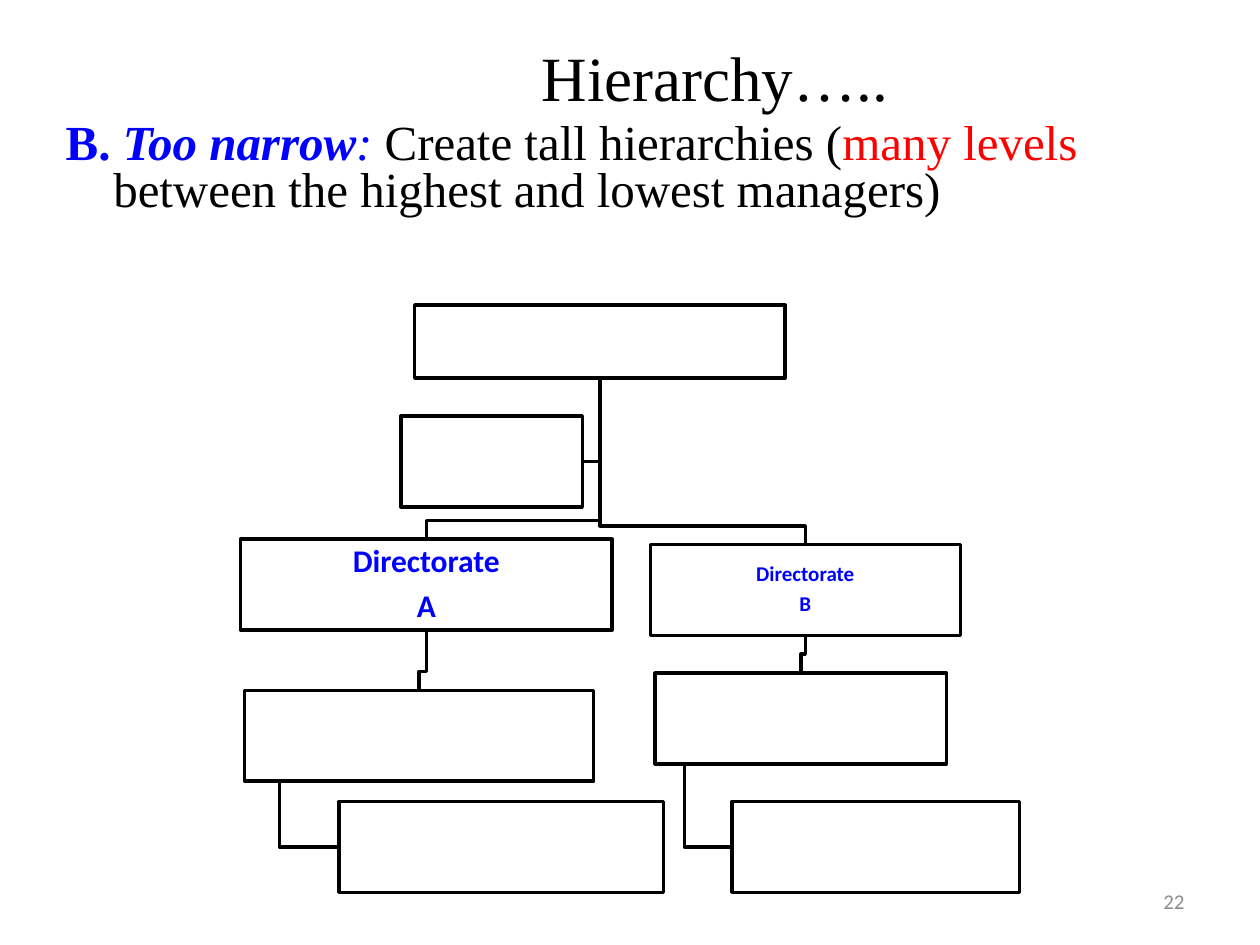
from lxml.etree import SubElement
from pptx import Presentation
from pptx.dml.color import RGBColor
from pptx.enum.shapes import MSO_SHAPE
from pptx.enum.text import MSO_ANCHOR, PP_ALIGN
from pptx.oxml.ns import qn
from pptx.util import Cm, Pt

SERIF, SANS = "Times New Roman", "Calibri"
BLACK, WHITE, BLUE, RED, GREY = "000000", "FFFFFF", "0000FF", "FF0000", "8C8C8C"
BOX_HEIGHT = 1.83
BEND = 0.38


def colour(value):
    """Turn a hex string into a colour."""
    return RGBColor.from_string(value)


def place(shape, left, top, width, height):
    """Move and size a shape, in centimetres."""
    shape.left, shape.top = Cm(left), Cm(top)
    shape.width, shape.height = Cm(width), Cm(height)


def add_span(para, text, size, font, tint, bold=None, italic=None):
    """Append one formatted run to a paragraph."""
    span = para.add_run()
    span.text = text
    span.font.size, span.font.name = Pt(size), font
    span.font.bold, span.font.italic = bold, italic
    span.font.color.rgb = colour(tint)


def fill_title(page, left, top, width, height):
    """Place and write the title."""
    title = page.shapes.title
    place(title, left, top, width, height)
    title.text_frame.vertical_anchor = MSO_ANCHOR.MIDDLE
    para = title.text_frame.paragraphs[0]
    para.alignment = PP_ALIGN.CENTER
    add_span(para, "Hierarchy…..", 36, SERIF, BLACK)


def fill_body(page, left, top, width, height):
    """Place and write the lettered statement with a hanging indent."""
    body = page.placeholders[1]
    place(body, left, top, width, height)
    para = body.text_frame.paragraphs[0]
    para.line_spacing = 0.8
    properties = para._p.get_or_add_pPr()
    properties.set("marL", str(Cm(0.96)))
    properties.set("indent", str(-Cm(0.96)))
    SubElement(properties, qn("a:buNone"))
    for text, tint, bold, italic in (
        ("B. ", BLUE, True, False),
        ("Too narrow", BLUE, True, True),
        (": ", BLUE, False, True),
        ("Create tall hierarchies (", BLACK, False, False),
        ("many levels ", RED, False, False),
        ("between the highest and lowest managers)", BLACK, False, False),
    ):
        add_span(para, text, 28, SERIF, tint, bold, italic)


def outline(shape):
    """Give a shape the black chart line and no shadow."""
    shape.shadow.inherit = False
    shape.line.color.rgb = colour(BLACK)
    shape.line.width = Pt(2)


def add_unit(chart, box, lines, size):
    """Draw one unit of the chart with its label lines."""
    unit = chart.shapes.add_shape(MSO_SHAPE.RECTANGLE, *map(Cm, box))
    outline(unit)
    unit.fill.solid()
    unit.fill.fore_color.rgb = colour(WHITE)
    frame = unit.text_frame
    frame.word_wrap = True
    frame.vertical_anchor = MSO_ANCHOR.MIDDLE
    frame.margin_left = frame.margin_right = Cm(0.03)
    frame.margin_top = frame.margin_bottom = Cm(0.03)
    for index, text in enumerate(lines):
        para = frame.add_paragraph() if index else frame.paragraphs[0]
        para.alignment = PP_ALIGN.CENTER
        para.line_spacing = 0.9
        para.space_after = Pt(size * 0.35)
        add_span(para, text, size, SANS, BLUE, True)


def link_points(kind, parent, child):
    """Return the corners of the link between two boxes."""
    left, top, width, height = parent
    child_left, child_top, child_width, child_height = child
    bottom, middle = top + height, left + width / 2
    side = child_top + child_height / 2
    if kind == "hang":
        stem = left + width / 10
        return [(stem, bottom), (stem, side), (child_left, side)]
    if kind == "assist":
        return [(middle, bottom), (middle, side), (child_left + child_width, side)]
    centre, bend = child_left + child_width / 2, child_top - BEND
    return [(middle, bottom), (middle, bend), (centre, bend), (centre, child_top)]


def add_link(chart, points):
    """Draw an open angled line through the points."""
    start, *rest = [(Cm(x), Cm(y)) for x, y in points]
    builder = chart.shapes.build_freeform(*start)
    builder.add_line_segments(rest, close=False)
    link = builder.convert_to_shape()
    outline(link)
    link.fill.background()


def add_hierarchy(page, left, top):
    """Draw the organisation chart from its top left corner."""
    units = {
        "head": (3.51, 0, 7.47, 1.47),
        "assistant": (3.23, 2.24, 3.66, BOX_HEIGHT),
        "directorate A": (0, 4.72, 7.49, BOX_HEIGHT),
        "directorate B": (8.26, 4.83, 6.25, BOX_HEIGHT),
        "division A": (0.08, 7.77, 7.04, BOX_HEIGHT),
        "division B": (8.36, 7.42, 5.87, BOX_HEIGHT),
        "team A": (1.98, 10.01, 6.55, BOX_HEIGHT),
        "team B": (9.91, 10.01, 5.79, BOX_HEIGHT),
    }
    boxes = {name: (left + x, top + y, w, h) for name, (x, y, w, h) in units.items()}
    labels = {
        "directorate A": (("Directorate", "A"), 18),
        "directorate B": (("Directorate", "B"), 12),
    }
    links = [("assist", "head", "assistant")]
    for letter in "AB":
        links += [
            ("drop", "head", f"directorate {letter}"),
            ("drop", f"directorate {letter}", f"division {letter}"),
            ("hang", f"division {letter}", f"team {letter}"),
        ]
    chart = page.shapes.add_group_shape()
    for kind, parent, child in links:
        add_link(chart, link_points(kind, boxes[parent], boxes[child]))
    for name, box in boxes.items():
        add_unit(chart, box, *labels.get(name, ((), 12)))


def add_page_number(page, left, top, width, height):
    """Write the page number, right aligned."""
    box = page.shapes.add_textbox(*map(Cm, (left, top, width, height)))
    box.text_frame.word_wrap = True
    box.text_frame.vertical_anchor = MSO_ANCHOR.MIDDLE
    para = box.text_frame.paragraphs[0]
    para.alignment = PP_ALIGN.RIGHT
    add_span(para, "22", 12, SANS, GREY)


def main():
    """Build the deck and save it."""
    deck = Presentation()
    deck.slide_width, deck.slide_height = Cm(25.4), Cm(19.05)
    page = deck.slides.add_slide(deck.slide_layouts[1])
    fill_title(page, 4, 0.76, 20.82, 1.57)
    fill_body(page, 1.07, 2.34, 23.75, 16.08)
    add_hierarchy(page, 4.85, 6.15)
    add_page_number(page, 18.2, 17.66, 5.93, 1.01)
    deck.save("out.pptx")


if __name__ == "__main__":
    main()
